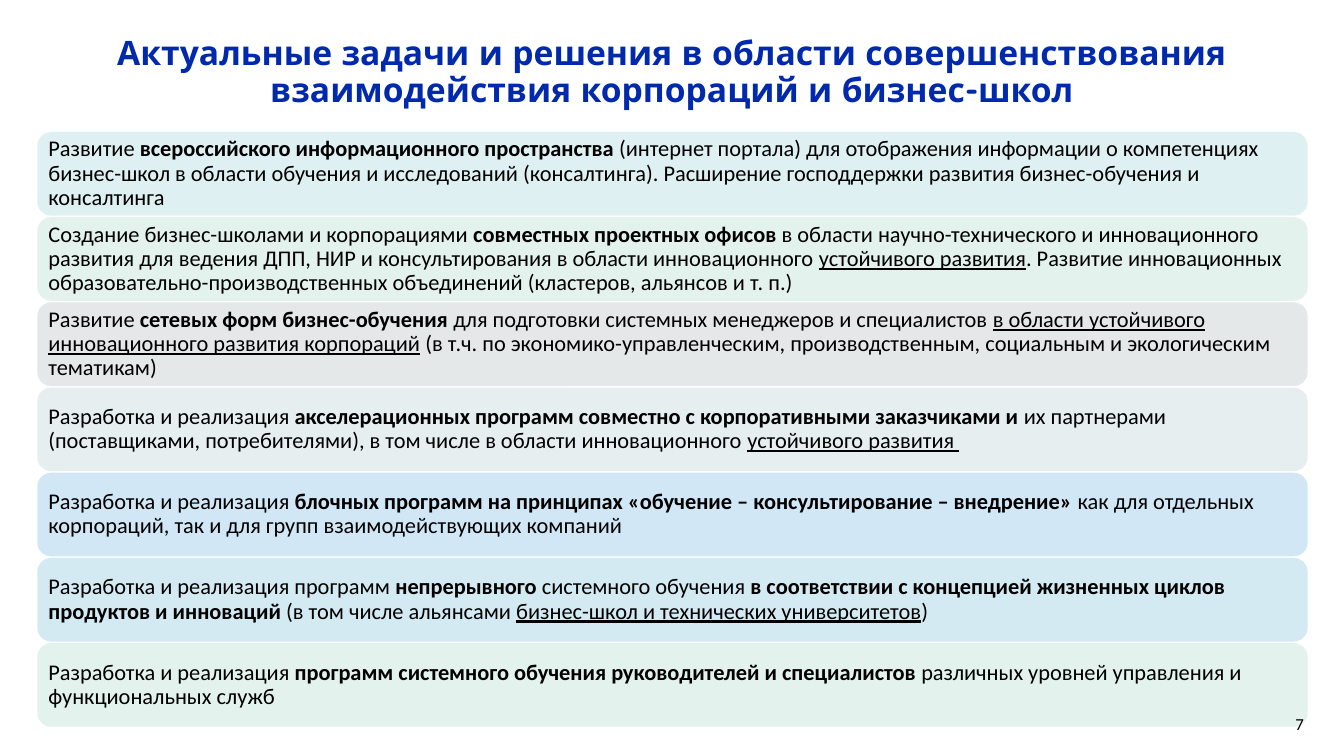
"""Build the slide on tasks and solutions for corporations and business schools."""
from dataclasses import dataclass

from pptx import Presentation
from pptx.dml.color import RGBColor
from pptx.enum.shapes import MSO_SHAPE as SHAPE
from pptx.enum.text import MSO_ANCHOR as ANCHOR, MSO_AUTO_SIZE as AUTOSIZE, PP_ALIGN as ALIGN
from pptx.util import Inches, Pt


@dataclass(frozen=True)
class Run:
    text: str
    bold: bool = False
    underline: bool = False


@dataclass(frozen=True)
class Task:
    fill: str
    runs: tuple[Run, ...]


LEFT, TOP, WIDTH, HEIGHT, PITCH = 0.37, 1.31, 12.6, 0.83, 0.845
TITLE = ("Актуальные задачи и решения в области совершенствования "
         "взаимодействия корпораций и бизнес-школ")
TASKS = (
    Task("DEF0F2", (
        Run("Развитие "),
        Run("всероссийского информационного пространства ", bold=True),
        Run("(интернет портала) для отображения информации о компетенциях бизнес-школ "
            "в области обучения и исследований (консалтинга). Расширение господдержки "
            "развития бизнес-обучения и консалтинга"))),
    Task("E3F2ED", (
        Run("Создание бизнес-школами и корпорациями "),
        Run("совместных проектных офисов ", bold=True),
        Run("в области научно-технического и инновационного развития для ведения ДПП, "
            "НИР и консультирования в области инновационного "),
        Run("устойчивого развития", underline=True),
        Run(". Развитие инновационных образовательно-производственных объединений "
            "(кластеров, альянсов и т. п.)"))),
    Task("E4E8E8", (
        Run("Развитие "),
        Run("сетевых форм бизнес-обучения ", bold=True),
        Run("для подготовки системных менеджеров и специалистов "),
        Run("в области устойчивого инновационного развития корпораций", underline=True),
        Run(" (в т.ч. по экономико-управленческим, производственным, социальным "
            "и экологическим тематикам)"))),
    Task("E6EEF0", (
        Run("Разработка и реализация "),
        Run("акселерационных программ совместно с корпоративными заказчиками и ", bold=True),
        Run("их партнерами (поставщиками, потребителями), в том числе в области "
            "инновационного "),
        Run("устойчивого развития ", underline=True))),
    Task("D1E7F6", (
        Run("Разработка и реализация "),
        Run("блочных программ на принципах «обучение – консультирование – внедрение» ",
            bold=True),
        Run("как для отдельных корпораций, так и для групп взаимодействующих компаний"))),
    Task("D4EAF3", (
        Run("Разработка и реализация программ "),
        Run("непрерывного", bold=True),
        Run(" системного обучения "),
        Run("в соответствии с концепцией жизненных циклов продуктов и инноваций", bold=True),
        Run(" (в том числе альянсами "),
        Run("бизнес-школ и технических университетов", underline=True),
        Run(")"))),
    Task("E3F2ED", (
        Run("Разработка и реализация "),
        Run("программ системного обучения руководителей и специалистов ", bold=True),
        Run("различных уровней управления и функциональных служб"))),
)


def rgb(value: str) -> RGBColor:
    return RGBColor.from_string(value)


def write(sp, runs: tuple[Run, ...], *, size: float, font: str = "Calibri",
          color: str = "000000", align=ALIGN.LEFT, spacing: float = 0.9,
          inset: float | None = None) -> None:
    tf = sp.text_frame
    tf.word_wrap = True
    tf.auto_size = AUTOSIZE.NONE
    tf.vertical_anchor = ANCHOR.MIDDLE
    if inset is not None:
        tf.margin_left = tf.margin_right = tf.margin_top = tf.margin_bottom = Inches(inset)
    p = tf.paragraphs[0]
    p.alignment = align
    p.line_spacing = spacing
    for run in runs:
        r = p.add_run()
        r.text = run.text
        r.font.name = font
        r.font.size = Pt(size)
        r.font.bold = run.bold
        r.font.underline = run.underline
        r.font.color.rgb = rgb(color)


def add_title(s) -> None:
    sp = s.shapes.title
    sp.left, sp.top, sp.width, sp.height = (Inches(v) for v in (0, 0.3, 13.33, 0.85))
    write(sp, (Run(TITLE, bold=True),), size=24, font="Quicksand", color="0029AC",
          align=ALIGN.CENTER)


def add_task(s, row: int, task: Task) -> None:
    sp = s.shapes.add_shape(SHAPE.ROUNDED_RECTANGLE, Inches(LEFT), Inches(TOP + row * PITCH),
                            Inches(WIDTH), Inches(HEIGHT))
    sp.shadow.inherit = False
    sp.fill.solid()
    sp.fill.fore_color.rgb = rgb(task.fill)
    sp.line.fill.background()
    write(sp, task.runs, size=16, inset=0.07)


def add_page_number(s, number: str) -> None:
    sp = s.shapes.add_textbox(Inches(9.92), Inches(6.98), Inches(3.11), Inches(0.4))
    write(sp, (Run(number),), size=12, align=ALIGN.RIGHT, spacing=1.0)


def main() -> None:
    prs = Presentation()
    prs.slide_width, prs.slide_height = Inches(13.33), Inches(7.5)
    s = prs.slides.add_slide(prs.slide_layouts.get_by_name("Title Only"))
    add_title(s)
    for row, task in enumerate(TASKS):
        add_task(s, row, task)
    add_page_number(s, "7")
    prs.save("out.pptx")


if __name__ == "__main__":
    main()
